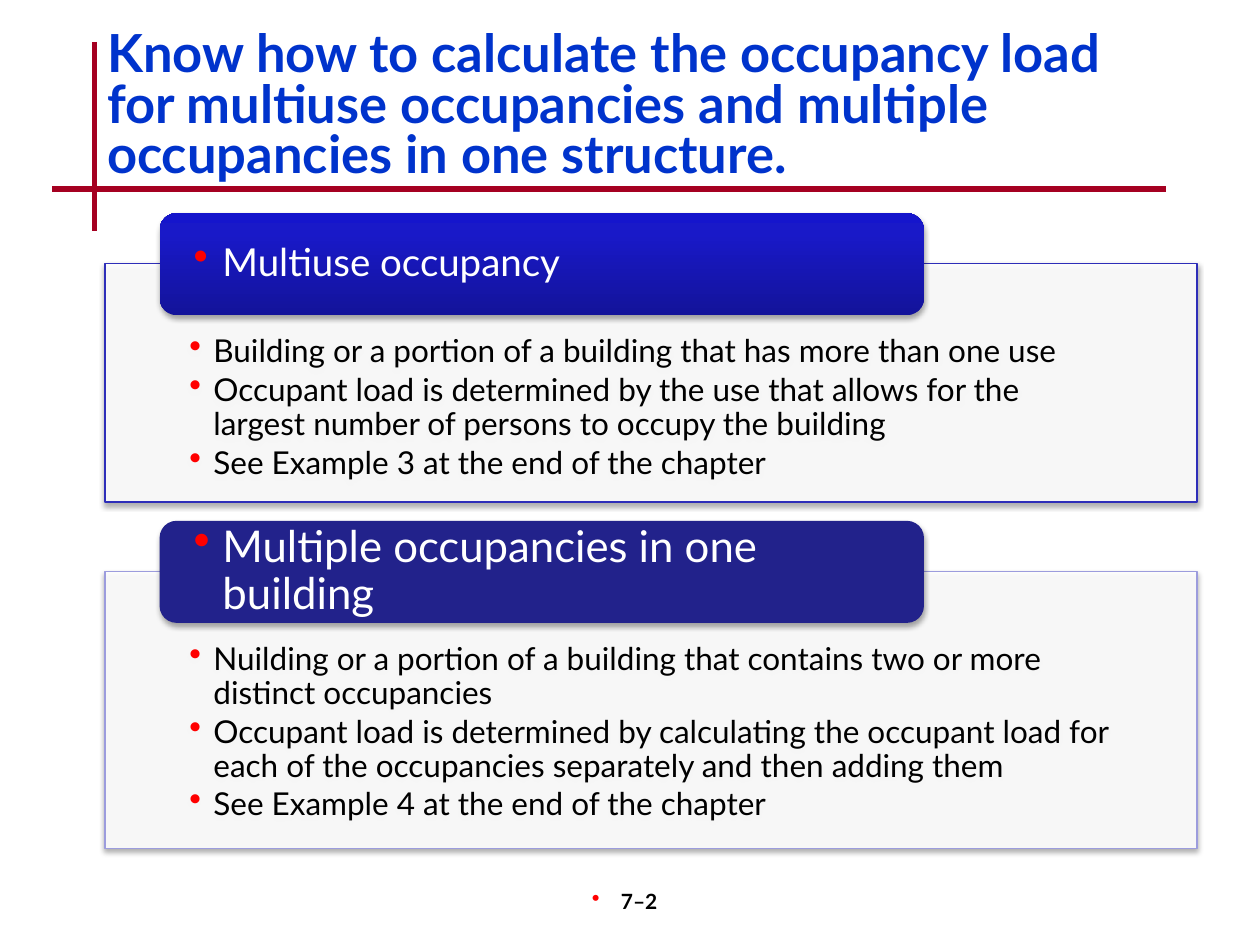
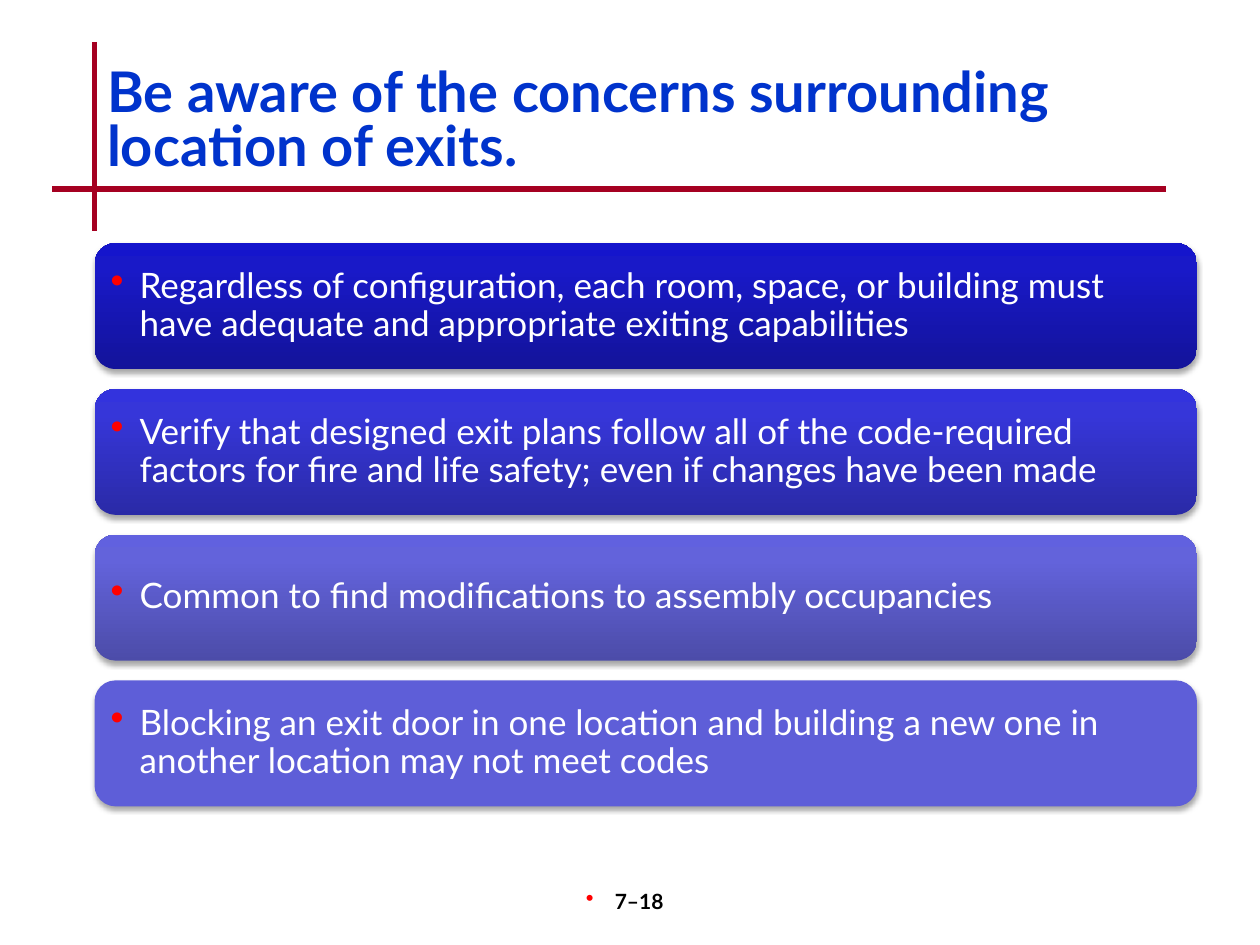
"""Build two slides on occupancy loads and exit locations."""
from copy import deepcopy

from lxml import etree
from pptx import Presentation
from pptx.dml.color import RGBColor
from pptx.enum.shapes import MSO_CONNECTOR, MSO_SHAPE
from pptx.enum.text import MSO_ANCHOR, MSO_AUTO_SIZE, PP_ALIGN
from pptx.oxml.ns import qn
from pptx.util import Inches, Pt

STRAIGHT = MSO_CONNECTOR.STRAIGHT
RECTANGLE, ROUNDED = MSO_SHAPE.RECTANGLE, MSO_SHAPE.ROUNDED_RECTANGLE
TOP, MIDDLE = MSO_ANCHOR.TOP, MSO_ANCHOR.MIDDLE
LEFT, CENTER = PP_ALIGN.LEFT, PP_ALIGN.CENTER
NO_FIT = MSO_AUTO_SIZE.NONE

FONT = "Lato"
BLACK = RGBColor(0x00, 0x00, 0x00)
WHITE = RGBColor(0xFF, 0xFF, 0xFF)
BULLET_RED = RGBColor(0xFF, 0x00, 0x00)
RULE_RED = RGBColor(0xA5, 0x00, 0x21)
TITLE_BLUE = RGBColor(0x00, 0x33, 0xCC)
NAVY = RGBColor(0x22, 0x22, 0x8B)
PERIWINKLE = RGBColor(0x5E, 0x5E, 0xD8)
EDGE_BLUE = RGBColor(0x2E, 0x2E, 0xB9)
EDGE_LILAC = RGBColor(0x9C, 0x9C, 0xDD)
DEEP = [RGBColor(0x13, 0x13, 0x9A), RGBColor(0x19, 0x19, 0xC8), RGBColor(0x15, 0x15, 0xCC)]
MEDIUM = [RGBColor(0x2A, 0x2A, 0xA7), RGBColor(0x36, 0x36, 0xD9), RGBColor(0x33, 0x33, 0xDD)]
SOFT = [RGBColor(0x4C, 0x4C, 0xA9), RGBColor(0x63, 0x63, 0xDB), RGBColor(0x61, 0x61, 0xDF)]
STOPS = [0, 0.8, 1]

prs = Presentation()
prs.slide_width, prs.slide_height = Inches(10), Inches(7.5)
UNIT = prs.slide_width / 60


def write(frame, lines, insets, anchor, font, paragraph_format, indent=0):
    """Fill a text frame with equally formatted, optionally bulleted lines."""
    frame.word_wrap, frame.auto_size, frame.vertical_anchor = True, NO_FIT, anchor
    for side, inset in zip(("left", "top", "right", "bottom"), insets):
        setattr(frame, f"margin_{side}", Inches(inset))
    for number, line in enumerate(lines):
        paragraph = frame.add_paragraph() if number else frame.paragraphs[0]
        if indent:
            properties = paragraph._p.get_or_add_pPr()
            properties.set("marL", str(Inches(indent)))
            properties.set("indent", str(-Inches(indent)))
            colour = etree.SubElement(properties, qn("a:buClr"))
            etree.SubElement(colour, qn("a:srgbClr"), val=str(BULLET_RED))
            etree.SubElement(properties, qn("a:buSzPct"), val="110000")
            etree.SubElement(properties, qn("a:buChar"), char="•")
        for name, value in paragraph_format.items():
            setattr(paragraph, name, value)
        run = paragraph.add_run()
        run.text = line
        run.font.color.rgb = font["color"]
        for name in font.keys() - {"color"}:
            setattr(run.font, name, font[name])


def add_card(slide, preset, box, fill, edge=None):
    """Add a shadowed card with a solid or three-stop fill."""
    card = slide.shapes.add_shape(preset, *[round(n * UNIT) for n in box])
    if isinstance(fill, list):
        card.fill.gradient()
        card.fill.gradient_angle = 90
        stop_list = card._element.spPr.find(".//" + qn("a:gsLst"))
        stop_list.append(deepcopy(stop_list[0]))
        for stop, position, colour in zip(card.fill.gradient_stops, STOPS, fill):
            stop.position, stop.color.rgb = position, colour
    else:
        card.fill.solid()
        card.fill.fore_color.rgb = fill
    if edge:
        card.line.color.rgb, card.line.width = edge, Pt(0.75)
    else:
        card.line.fill.background()
    card.shadow.inherit = False
    effects = card._element.spPr.find(qn("a:effectLst"))
    shadow = etree.SubElement(effects, qn("a:outerShdw"), blurRad=str(Pt(3.1)),
                              dist=str(Pt(1.8)), dir="5400000", rotWithShape="0")
    tint = etree.SubElement(shadow, qn("a:srgbClr"), val=str(BLACK))
    etree.SubElement(tint, qn("a:alpha"), val="35000")
    return card


PAGES = [
    ("Know how to calculate the occupancy load for multiuse occupancies and multiple "
     "occupancies in one structure.", 1.25, 30, "7–2"),
    ("Be aware of the concerns surrounding location of exits.", 3, 32, "7–18"),
]
RULES = [(4.5, 2, 4.5, 11), (2.5, 9, 55.5, 9)]

slides = []
for heading, heading_top, heading_size, page_number in PAGES:
    slide = prs.slides.add_slide(prs.slide_layouts[5])
    slides.append(slide)
    for ends in RULES:
        rule = slide.shapes.add_connector(STRAIGHT, *[round(n * UNIT) for n in ends])
        rule.line.color.rgb, rule.line.width = RULE_RED, Pt(3)
        etree.SubElement(rule._element.spPr, qn("a:effectLst"))

    title = slide.shapes.title
    place = {"left": 4.5, "top": heading_top, "width": 51, "height": 7}
    for name, value in place.items():
        setattr(title, name, round(value * UNIT))
    write(title.text_frame, [heading], (0.1, 0.05, 0.1, 0.05), TOP,
          {"name": FONT, "size": Pt(heading_size), "bold": True, "color": TITLE_BLUE},
          {"alignment": LEFT, "line_spacing": 0.8})

    footer = slide.shapes.add_textbox(*[round(n * UNIT) for n in (23.5, 42, 12.5, 3)])
    write(footer.text_frame, [page_number], (0.1, 0.05, 0.1, 0.05), TOP,
          {"name": FONT, "size": Pt(12), "bold": True, "color": BLACK},
          {"alignment": CENTER}, 0.23)

occupancy_slide, exits_slide = slides

OCCUPANCIES = [
    ("Multiuse occupancy", 22, DEEP, EDGE_BLUE, 12.55, 11.35, [
        "Building or a portion of a building that has more than one use",
        "Occupant load is determined by the use that allows for the largest number of "
        "persons to occupy the building",
        "See Example 3 at the end of the chapter"]),
    ("Multiple occupancies in one building", 25, NAVY, EDGE_LILAC, 27.2, 13.2, [
        "Nuilding or a portion of a building that contains two or more distinct occupancies",
        "Occupant load is determined by calculating the occupant load for each of the "
        "occupancies separately and then adding them",
        "See Example 4 at the end of the chapter"]),
]
for label, label_size, fill, edge, top, height, facts in OCCUPANCIES:
    panel = add_card(occupancy_slide, RECTANGLE, (5, top, 52, height), WHITE, edge)
    white = panel._element.spPr.find(qn("a:solidFill"))[0]
    etree.SubElement(white, qn("a:alpha"), val="90000")
    write(panel.text_frame, facts, (0.67, 0.57, 0.67, 0.14), TOP,
          {"name": FONT, "size": Pt(18), "color": BLACK},
          {"alignment": LEFT, "line_spacing": 0.9, "space_after": Pt(2.7)}, 0.19)
    banner = add_card(occupancy_slide, ROUNDED, (7.6, top - 2.4, 36.4, 4.86), fill)
    write(banner.text_frame, [label], (0.23, 0, 0.23, 0), MIDDLE,
          {"name": FONT, "size": Pt(label_size), "color": WHITE},
          {"alignment": LEFT, "line_spacing": 0.9}, 0.23)

EXIT_CONCERNS = [
    ("Regardless of configuration, each room, space, or building must have adequate and "
     "appropriate exiting capabilities", DEEP),
    ("Verify that designed exit plans follow all of the code-required factors for fire and "
     "life safety; even if changes have been made", MEDIUM),
    ("Common to find modifications to assembly occupancies", SOFT),
    ("Blocking an exit door in one location and building a new one in another location may "
     "not meet codes", PERIWINKLE),
]
for row, (concern, fill) in enumerate(EXIT_CONCERNS):
    bar = add_card(exits_slide, ROUNDED, (4.5, 11.58 + 6.94 * row, 52.5, 6), fill)
    write(bar.text_frame, [concern], (0.08, 0.08, 0.08, 0.08), MIDDLE,
          {"name": FONT, "size": Pt(20), "color": WHITE},
          {"alignment": LEFT, "line_spacing": 0.9}, 0.23)

prs.save("out.pptx")
